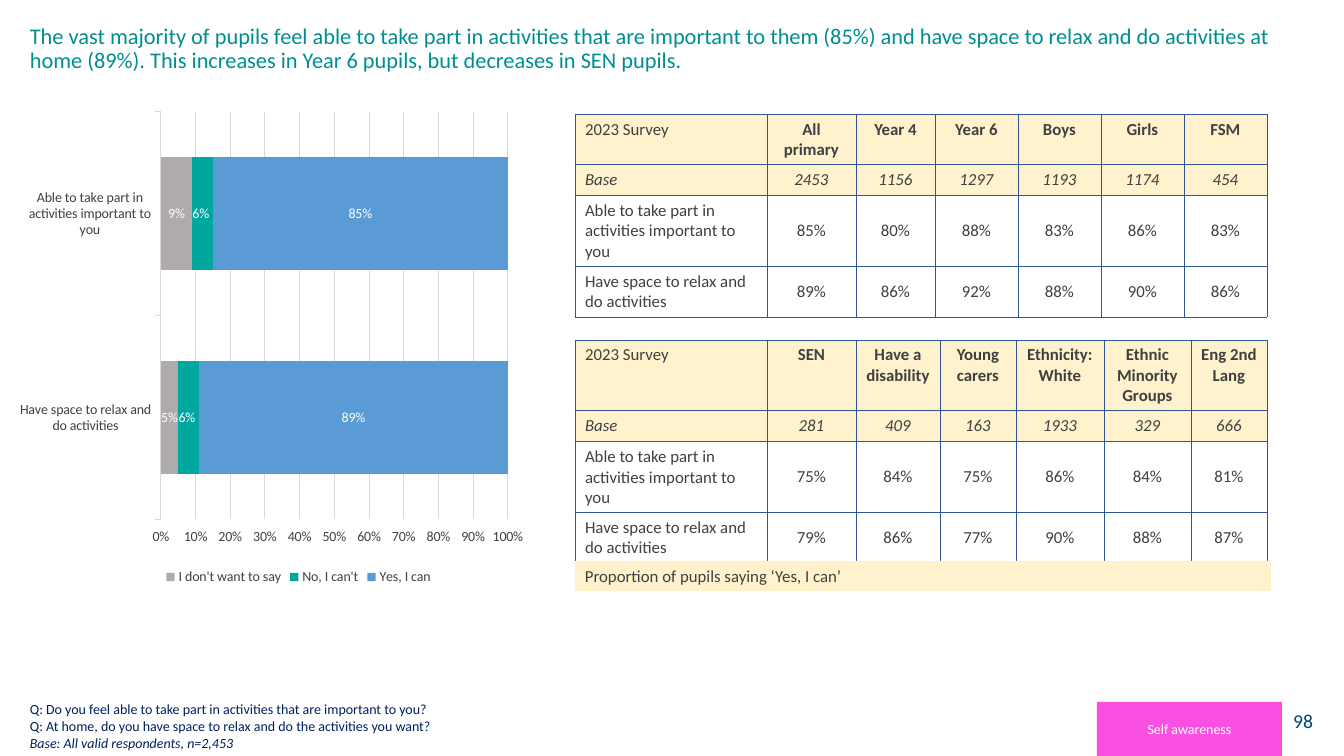
from lxml import etree
from pptx import Presentation
from pptx.chart.data import CategoryChartData
from pptx.dml.color import RGBColor
from pptx.enum.chart import XL_CHART_TYPE, XL_LABEL_POSITION, XL_LEGEND_POSITION, XL_TICK_MARK
from pptx.enum.shapes import MSO_SHAPE
from pptx.enum.text import MSO_ANCHOR, PP_ALIGN
from pptx.oxml import parse_xml
from pptx.oxml.ns import nsdecls
from pptx.util import Pt

EMU_PER_PX = 914400 / 100.8
LEFT, CENTER, RIGHT = PP_ALIGN.LEFT, PP_ALIGN.CENTER, PP_ALIGN.RIGHT
TOP, MIDDLE, BOTTOM = MSO_ANCHOR.TOP, MSO_ANCHOR.MIDDLE, MSO_ANCHOR.BOTTOM
RECTANGLE = MSO_SHAPE.RECTANGLE
STACKED_BAR = XL_CHART_TYPE.BAR_STACKED_100
INSIDE_END, LABEL_CENTER = XL_LABEL_POSITION.INSIDE_END, XL_LABEL_POSITION.CENTER
LEGEND_BOTTOM = XL_LEGEND_POSITION.BOTTOM
TICK_OUT = XL_TICK_MARK.OUTSIDE

FONT = "Calibri"
CREAM, GREY_TEXT, GRID = "FFF2CC", "404040", "D9D9D9"
NAVY, WHITE, BORDER = "002060", "FFFFFF", "2F5597"

ABLE = "Able to take part in activities important to you"
SPACE = "Have space to relax and do activities"


def px(length):
    return round(length * EMU_PER_PX)


def color(value):
    return RGBColor.from_string(value)


def set_font(font, size, ink, bold=False, italic=False):
    font.name, font.size, font.bold, font.italic = FONT, Pt(size), bold, italic
    font.color.rgb = color(ink)


def add_text(frame, text, size=12, ink=GREY_TEXT, align=LEFT, bold=False,
             italic=False, spacing=None, first=True):
    para = frame.paragraphs[0] if first else frame.add_paragraph()
    para.alignment = align
    if spacing:
        para.line_spacing = spacing
    span = para.add_run()
    span.text = text
    set_font(span.font, size, ink, bold, italic)


def add_text_box(page, left, top, width, height, anchor=TOP):
    box = page.shapes.add_textbox(px(left), px(top), px(width), px(height))
    box.text_frame.word_wrap = True
    box.text_frame.vertical_anchor = anchor
    return box.text_frame


def add_panel(page, left, top, width, height, fill, text, anchor=MIDDLE, **text_format):
    panel = page.shapes.add_shape(RECTANGLE, px(left), px(top), px(width), px(height))
    panel.shadow.inherit = False
    panel.fill.solid()
    panel.fill.fore_color.rgb = color(fill)
    panel.line.fill.background()
    panel.text_frame.word_wrap = True
    panel.text_frame.vertical_anchor = anchor
    add_text(panel.text_frame, text, **text_format)


def set_borders(cell):
    properties = cell._tc.get_or_add_tcPr()
    for index, side in enumerate(("lnL", "lnR", "lnT", "lnB")):
        line = parse_xml(f'<a:{side} {nsdecls("a")} w="{Pt(0.5)}"><a:solidFill>'
                         f'<a:srgbClr val="{BORDER}"/></a:solidFill></a:{side}>')
        properties.insert(index, line)


def add_survey_table(page, top, widths, heights, rows):
    frame = page.shapes.add_table(len(rows), len(widths), px(575), px(top),
                                  px(sum(widths)), px(sum(heights)))
    table = frame.table
    table.first_row = table.horz_banding = False
    for column, width in zip(table.columns, widths):
        column.width = px(width)
    for row, height in zip(table.rows, heights):
        row.height = px(height)
    for r, values in enumerate(rows):
        for c, value in enumerate(values):
            cell = table.cell(r, c)
            if r < 2:
                cell.fill.solid()
                cell.fill.fore_color.rgb = color(CREAM)
            else:
                cell.fill.background()
            set_borders(cell)
            cell.vertical_anchor = MIDDLE if r else TOP
            add_text(cell.text_frame, value, align=CENTER if c else LEFT,
                     bold=r == 0 and c > 0, italic=r == 1)


def set_plot_layout(chart, x, y, w, h):
    plot_area = chart._chartSpace.chart.plotArea
    for old in plot_area.findall("c:layout", plot_area.nsmap):
        plot_area.remove(old)
    layout = parse_xml(f'<c:layout {nsdecls("c")}><c:manualLayout/></c:layout>')
    settings = dict(layoutTarget="inner", xMode="edge", yMode="edge", x=x, y=y, w=w, h=h)
    for name, value in settings.items():
        etree.SubElement(layout[0], f"{{{layout.nsmap['c']}}}{name}", val=str(value))
    plot_area.insert(0, layout)


def add_answer_chart(page):
    answers = [("I don't want to say", (0.05, 0.09), "AFABAB", LABEL_CENTER),
               ("No, I can't", (0.06, 0.06), "00A79D", INSIDE_END),
               ("Yes, I can", (0.89, 0.85), "5B9BD5", LABEL_CENTER)]
    data = CategoryChartData(number_format="0%")
    data.categories = [SPACE, ABLE]
    for name, values, _, _ in answers:
        data.add_series(name, values)
    chart = page.shapes.add_chart(STACKED_BAR, px(20), px(92), px(554), px(497), data).chart
    set_font(chart.font, 10, GREY_TEXT)
    chart.has_title = False
    set_plot_layout(chart, 0.25, 0.04, 0.63, 0.82)

    # Bars and their labels
    plot = chart.plots[0]
    plot.gap_width, plot.overlap, plot.vary_by_categories = 80, 100, False
    for series, (_, _, fill, position) in zip(plot.series, answers):
        series.format.fill.solid()
        series.format.fill.fore_color.rgb = color(fill)
        labels = series.data_labels
        labels.show_value = True
        labels.number_format, labels.number_format_is_linked = "0%", False
        labels.position = position
        set_font(labels.font, 10, WHITE)

    # Axes
    for axis in (chart.category_axis, chart.value_axis):
        axis.major_tick_mark = TICK_OUT
        set_font(axis.tick_labels.font, 10, GREY_TEXT)
    category_line = chart.category_axis.format.line
    scale = chart.value_axis
    scale.minimum_scale, scale.maximum_scale, scale.major_unit = 0, 1, 0.1
    scale.tick_labels.number_format = "0%"
    scale.tick_labels.number_format_is_linked = False
    scale.format.line.fill.background()
    for line in (category_line, scale.major_gridlines.format.line):
        line.color.rgb = color(GRID)
        line.width = Pt(0.75)

    # Legend
    chart.has_legend = True
    chart.legend.position = LEGEND_BOTTOM
    chart.legend.include_in_layout = False
    set_font(chart.legend.font, 10, GREY_TEXT)


def main():
    deck = Presentation()
    deck.slide_width, deck.slide_height = px(1344), px(756)
    page = deck.slides.add_slide(deck.slide_layouts[6])

    # Page number and title
    add_panel(page, 1264, 701, 59, 40, WHITE, "98", size=14, ink="004376", align=RIGHT)
    title = add_text_box(page, 20, 20, 1280, 99)
    add_text(title, "The vast majority of pupils feel able to take part in activities that are "
             "important to them (85%) and have space to relax and do activities at home (89%). "
             "This increases in Year 6 pupils, but decreases in SEN pupils.",
             size=16, ink="008E91", spacing=0.9)

    add_answer_chart(page)

    # Questions and section tag
    notes = add_text_box(page, 20, 695, 1128, 61, anchor=BOTTOM)
    questions = ["Q: Do you feel able to take part in activities that are important to you?",
                 "Q: At home, do you have space to relax and do the activities you want?",
                 "Base: All valid respondents, n=2,453"]
    for index, line in enumerate(questions):
        add_text(notes, line, size=10, ink=NAVY, italic=index == 2, first=index == 0)
    add_panel(page, 1097, 702, 185, 54, "FA50E2", "Self awareness",
              size=10, ink=WHITE, align=CENTER)

    # Survey tables
    add_survey_table(page, 114, [192, 89, 79, 83, 83, 83, 83], [50, 31, 70, 51], [
        ["2023 Survey", "All primary", "Year 4", "Year 6", "Boys", "Girls", "FSM"],
        ["Base", "2453", "1156", "1297", "1193", "1174", "454"],
        [ABLE, "85%", "80%", "88%", "83%", "86%", "83%"],
        [SPACE, "89%", "86%", "92%", "88%", "90%", "86%"]])
    add_survey_table(page, 340, [192, 89, 84, 76, 88, 87, 76], [70, 31, 70, 51], [
        ["2023 Survey", "SEN", "Have a disability", "Young carers", "Ethnicity: White",
         "Ethnic Minority Groups", "Eng 2nd Lang"],
        ["Base", "281", "409", "163", "1933", "329", "666"],
        [ABLE, "75%", "84%", "75%", "86%", "84%", "81%"],
        [SPACE, "79%", "86%", "77%", "90%", "88%", "87%"]])
    add_panel(page, 575, 561, 696, 30, CREAM, "Proportion of pupils saying ‘Yes, I can’",
              anchor=TOP)

    deck.save("out.pptx")


if __name__ == "__main__":
    main()
